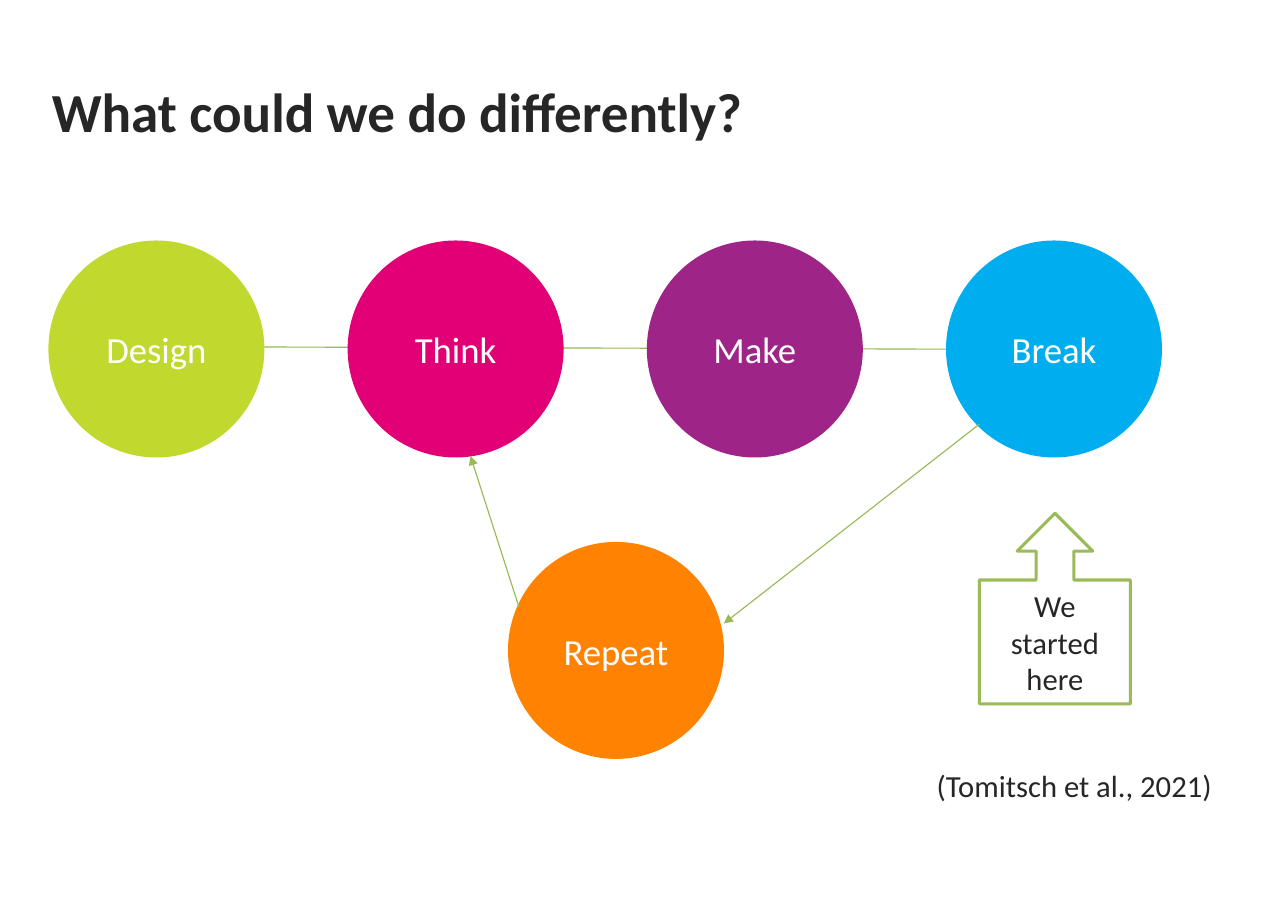
from lxml import etree
from pptx import Presentation
from pptx.dml.color import RGBColor
from pptx.enum.shapes import MSO_CONNECTOR, MSO_SHAPE
from pptx.enum.text import MSO_ANCHOR, PP_ALIGN
from pptx.oxml.ns import qn
from pptx.util import Inches, Pt

OVAL = MSO_SHAPE.OVAL
CALLOUT = MSO_SHAPE.UP_ARROW_CALLOUT
STRAIGHT = MSO_CONNECTOR.STRAIGHT
LEFT, CENTER = PP_ALIGN.LEFT, PP_ALIGN.CENTER
TOP, MIDDLE = MSO_ANCHOR.TOP, MSO_ANCHOR.MIDDLE

WIDTH, HEIGHT = Inches(11.69), Inches(8.27)
INK, WHITE, GREEN = "262626", "FFFFFF", "98B955"

# Places and sizes are percentages of the slide's width and height.
DISC_W, DISC_H = 16.77, 23.82
ROW_X, ROW_Y, PITCH = 3.76, 26.4, 23.23
STEPS = [("Design", "C1D82F"), ("Think", "E20076"),
         ("Make", "9E2487"), ("Break", "00AEEF")]


def rgb(code):
    return RGBColor.from_string(code)


def place(x, y):
    return round(WIDTH * x / 100), round(HEIGHT * y / 100)


def write(shape, text, size, color, align=CENTER, anchor=MIDDLE, bold=False):
    frame = shape.text_frame
    frame.text = text
    frame.word_wrap = True
    frame.vertical_anchor = anchor
    para = frame.paragraphs[0]
    para.alignment = align
    font = para.runs[0].font
    font.name, font.size, font.bold = "Calibri", Pt(size), bold
    font.color.rgb = rgb(color)


def add_title(slide, text):
    title = slide.shapes.title
    title.left, title.top = place(4.02, 7.01)
    title.width, title.height = place(61.42, 8.22)
    write(title, text, 36, INK, LEFT, TOP, True)
    frame = title.text_frame
    frame.margin_left = frame.margin_right = 0
    frame.margin_top = frame.margin_bottom = 0
    frame.paragraphs[0].line_spacing = Pt(52.1)


def add_shape(slide, kind, x, y, w, h, fill):
    shape = slide.shapes.add_shape(kind, *place(x, y), *place(w, h))
    shape.shadow.inherit = False
    shape.fill.solid()
    shape.fill.fore_color.rgb = rgb(fill)
    shape.line.fill.background()
    return shape


def add_disc(slide, text, fill, x, y):
    disc = add_shape(slide, OVAL, x, y, DISC_W, DISC_H, fill)
    write(disc, text, 24, WHITE)


def add_line(slide, start, end, arrow=False):
    line = slide.shapes.add_connector(STRAIGHT, *place(*start), *place(*end))
    line.line.color.rgb = rgb(GREEN)
    line.line.width = Pt(0.75)
    props = line._element.spPr
    if arrow:
        etree.SubElement(props.find(qn("a:ln")), qn("a:tailEnd"),
                         type="triangle")
    etree.SubElement(props, qn("a:effectLst"))


def add_callout(slide, text):
    note = add_shape(slide, CALLOUT, 76.05, 56.35, 11.72, 20.92, WHITE)
    note.line.color.rgb = rgb("9BBB59")
    note.line.width = Pt(2)
    write(note, text, 20, INK)


def add_source(slide, text):
    box = slide.shapes.add_textbox(*place(70.15, 83.56), *place(26.52, 5.32))
    write(box, text, 20, INK, anchor=TOP)


def main():
    deck = Presentation()
    deck.slide_width, deck.slide_height = WIDTH, HEIGHT
    slide = deck.slides.add_slide(deck.slide_layouts[5])
    add_title(slide, "What could we do differently?")
    add_line(slide, (20.53, 38.09), (73.48, 38.33))
    for i, (text, fill) in enumerate(STEPS):
        add_disc(slide, text, fill, ROW_X + i * PITCH, ROW_Y)
    add_disc(slide, "Repeat", "FF8200", 39.44, 59.49)
    add_source(slide, "(Tomitsch et al., 2021)")
    add_callout(slide, "We started here")
    add_line(slide, (76.05, 46.55), (56.2, 68.44), arrow=True)
    add_line(slide, (40.29, 66.63), (36.53, 50.06), arrow=True)
    deck.save("out.pptx")


if __name__ == "__main__":
    main()
